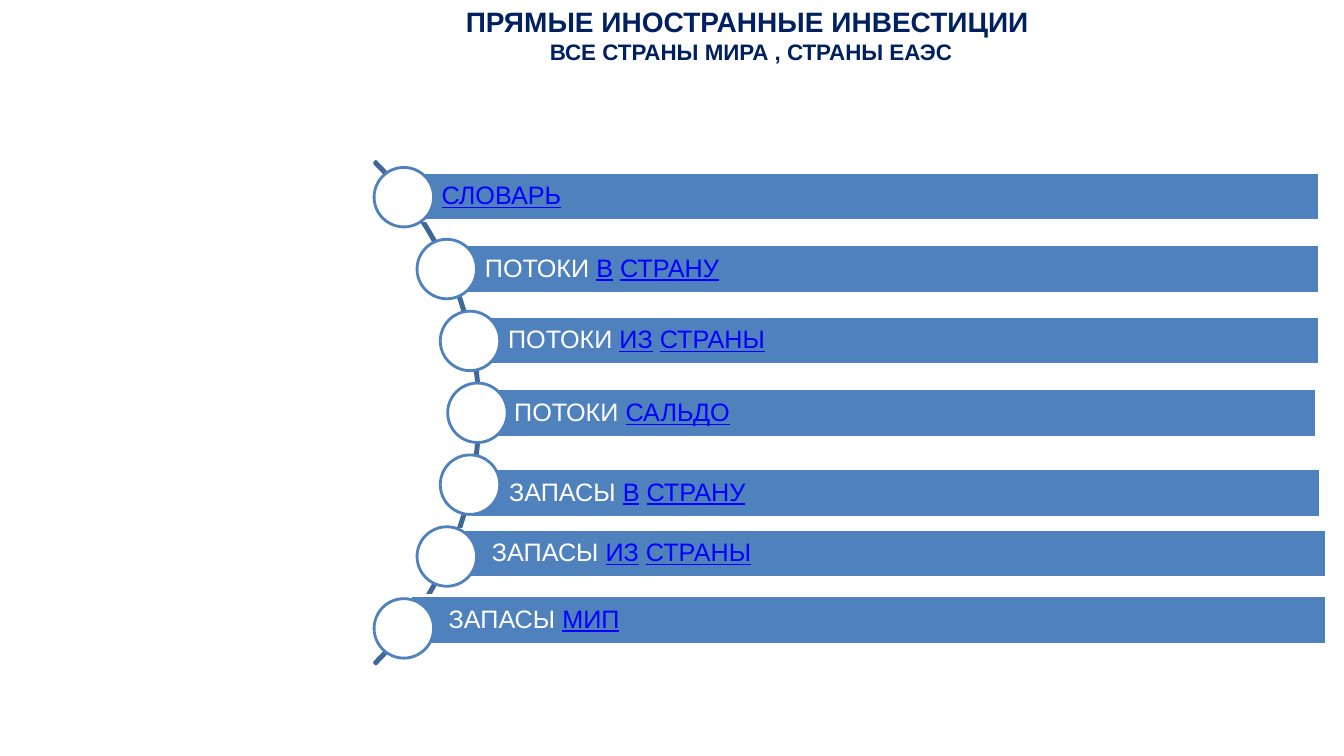
from dataclasses import dataclass
from math import sqrt

from pptx import Presentation
from pptx.dml.color import RGBColor
from pptx.enum.shapes import MSO_SHAPE
from pptx.enum.text import MSO_ANCHOR, PP_ALIGN
from pptx.shapes.autoshape import Shape
from pptx.slide import Slide
from pptx.util import Inches, Pt

RECTANGLE, OVAL, BLOCK_ARC = MSO_SHAPE.RECTANGLE, MSO_SHAPE.OVAL, MSO_SHAPE.BLOCK_ARC
TOP, MIDDLE = MSO_ANCHOR.TOP, MSO_ANCHOR.MIDDLE
LEFT, CENTER = PP_ALIGN.LEFT, PP_ALIGN.CENTER

WHITE = RGBColor(0xFF, 0xFF, 0xFF)
BLUE = RGBColor(0x4F, 0x81, 0xBD)
ARC_BLUE = RGBColor(0x3F, 0x67, 0x97)
LINK_BLUE = RGBColor(0x00, 0x00, 0xFF)
NAVY = RGBColor(0x00, 0x20, 0x60)
FONT = "Arial"

# Grid of one-inch cells
CELL = Inches(1)
COLUMNS, ROWS = 13.33, 7.5

ARC_X, ARC_Y, ARC_RADIUS = 1.235, 4.095, 3.525
CIRCLE_TRACK, CIRCLE_SIZE, CIRCLE_STEP = 3.5, 0.59, 0.713
BAR_HEIGHT = 0.48


@dataclass(frozen=True)
class MenuItem:
    label: str
    links: tuple[str, ...]
    left: float
    top: float
    right: float


TITLE_LINES = (
    ("ПРЯМЫЕ ИНОСТРАННЫЕ ИНВЕСТИЦИИ ", 20),
    ("ВСЕ СТРАНЫ МИРА , СТРАНЫ ЕАЭС", 16),
)
MENU = (
    MenuItem("", ("СЛОВАРЬ",), 4, 1.71, 13.09),
    MenuItem("ПОТОКИ", ("В", "СТРАНУ"), 4.43, 2.43, 13.09),
    MenuItem("ПОТОКИ", ("ИЗ", "СТРАНЫ"), 4.66, 3.14, 13.09),
    MenuItem("ПОТОКИ", ("САЛЬДО",), 4.72, 3.86, 13.06),
    MenuItem("ЗАПАСЫ", ("В", "СТРАНУ"), 4.67, 4.65, 13.1),
    MenuItem("ЗАПАСЫ", ("ИЗ", "СТРАНЫ"), 4.5, 5.25, 13.16),
    MenuItem("ЗАПАСЫ", ("МИП",), 4.07, 5.91, 13.16),
)


def grid(*cells: float) -> list[int]:
    return [round(cell * CELL) for cell in cells]


def add_outlined_shape(slide: Slide, kind: MSO_SHAPE, box: tuple[float, ...],
                       fill: RGBColor | None, line: RGBColor) -> Shape:
    shape = slide.shapes.add_shape(kind, *grid(*box))
    shape.shadow.inherit = False
    if fill is None:
        shape.fill.background()
    else:
        shape.fill.solid()
        shape.fill.fore_color.rgb = fill
    shape.line.color.rgb = line
    shape.line.width = Pt(2)
    return shape


def fill_title(slide: Slide) -> None:
    title = slide.shapes.title
    title.left, title.top, title.width, title.height = grid(3.6, -0.01, 7.7, 0.71)
    text_frame = title.text_frame
    text_frame.text = "\n".join(text for text, _ in TITLE_LINES)
    text_frame.vertical_anchor = TOP
    for paragraph, (_, size) in zip(text_frame.paragraphs, TITLE_LINES):
        paragraph.alignment = CENTER
        font = paragraph.runs[0].font
        font.name, font.size, font.bold = FONT, Pt(size), True
        font.color.rgb = NAVY


def add_arc(slide: Slide) -> None:
    diameter = 2 * ARC_RADIUS
    box = (ARC_X - ARC_RADIUS, ARC_Y - ARC_RADIUS, diameter, diameter)
    arc = add_outlined_shape(slide, BLOCK_ARC, box, None, ARC_BLUE)
    for index, value in enumerate((189, 27, 0.003)):
        arc.adjustments[index] = value


def add_bar(slide: Slide, item: MenuItem) -> None:
    box = (item.left, item.top, item.right - item.left, BAR_HEIGHT)
    bar = add_outlined_shape(slide, RECTANGLE, box, BLUE, WHITE)
    text_frame = bar.text_frame
    text_frame.vertical_anchor = MIDDLE
    text_frame.margin_left, text_frame.margin_right = grid(0.38, 0.05)
    text_frame.margin_top, text_frame.margin_bottom = grid(0.05, 0.05)
    paragraph = text_frame.paragraphs[0]
    paragraph.alignment = LEFT
    paragraph.line_spacing = 0.9

    pieces = [(item.label, False)] if item.label else []
    for link in item.links:
        if pieces:
            pieces.append((" ", False))
        pieces.append((link, True))
    for text, is_link in pieces:
        run = paragraph.add_run()
        run.text = text
        run.font.name, run.font.size = FONT, Pt(18)
        run.font.underline = is_link
        run.font.color.rgb = LINK_BLUE if is_link else WHITE


def add_circle(slide: Slide, index: int) -> None:
    """Place a circle on the arc, counting rows from its middle."""
    offset = (index - (len(MENU) - 1) / 2) * CIRCLE_STEP
    center_x = ARC_X + sqrt(CIRCLE_TRACK ** 2 - offset ** 2)
    radius = CIRCLE_SIZE / 2
    box = (center_x - radius, ARC_Y + offset - radius, CIRCLE_SIZE, CIRCLE_SIZE)
    add_outlined_shape(slide, OVAL, box, WHITE, BLUE)


def main() -> None:
    presentation = Presentation()
    presentation.slide_width, presentation.slide_height = grid(COLUMNS, ROWS)
    slide = presentation.slides.add_slide(presentation.slide_layouts[5])
    add_arc(slide)
    for index, item in enumerate(MENU):
        add_bar(slide, item)
        add_circle(slide, index)
    fill_title(slide)
    presentation.save("out.pptx")


if __name__ == "__main__":
    main()
